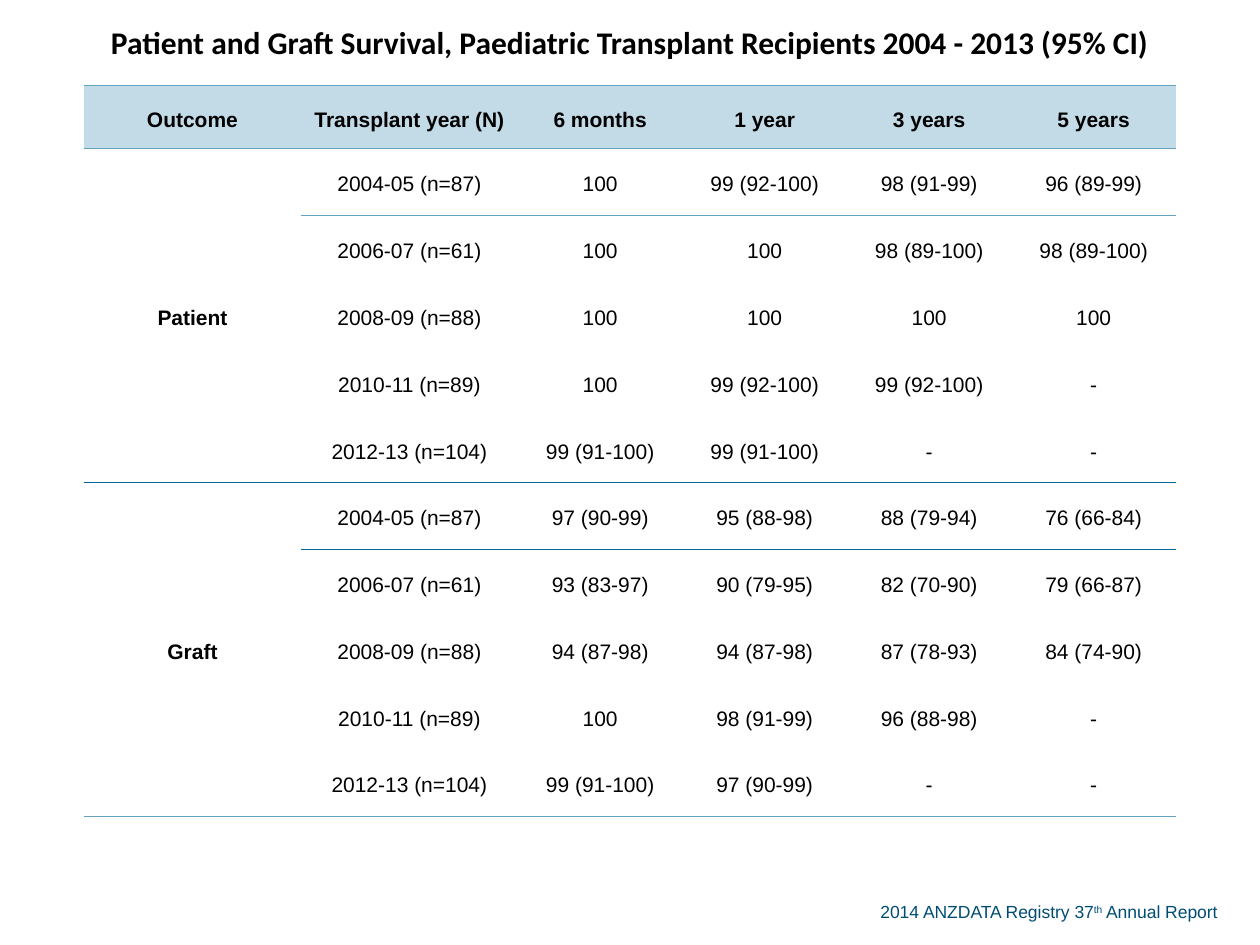
from lxml import etree
from pptx import Presentation
from pptx.dml.color import RGBColor
from pptx.enum.text import MSO_ANCHOR, PP_ALIGN
from pptx.oxml.ns import qn
from pptx.util import Pt

CENTER, LEFT = PP_ALIGN.CENTER, PP_ALIGN.LEFT
MIDDLE = MSO_ANCHOR.MIDDLE

BLACK = RGBColor(0x00, 0x00, 0x00)
NAVY = RGBColor(0x00, 0x4D, 0x73)
HEADER_FILL = RGBColor(0xC2, 0xDB, 0xE7)
LIGHT_RULE = RGBColor(0x66, 0xA3, 0xC2)
DARK_RULE = RGBColor(0x00, 0x66, 0x99)

PLAIN_STYLE = "{2D5ABB26-0587-4C30-8999-92F81FD0307C}"
COLUMN_WIDTHS = [124, 124, 94, 94, 94, 94]
TITLE_HEIGHT, HEADER_HEIGHT, DATA_HEIGHT = 48.8, 36, 38.17

TITLE = "Patient and Graft Survival, Paediatric Transplant Recipients 2004 - 2013 (95% CI)"
HEADERS = ["Outcome", "Transplant year (N)", "6 months", "1 year", "3 years", "5 years"]
COHORTS = ["2004-05 (n=87)", "2006-07 (n=61)", "2008-09 (n=88)",
           "2010-11 (n=89)", "2012-13 (n=104)"]
SURVIVAL = {
    "Patient": [
        ["100", "99 (92-100)", "98 (91-99)", "96 (89-99)"],
        ["100", "100", "98 (89-100)", "98 (89-100)"],
        ["100", "100", "100", "100"],
        ["100", "99 (92-100)", "99 (92-100)", "-"],
        ["99 (91-100)", "99 (91-100)", "-", "-"],
    ],
    "Graft": [
        ["97 (90-99)", "95 (88-98)", "88 (79-94)", "76 (66-84)"],
        ["93 (83-97)", "90 (79-95)", "82 (70-90)", "79 (66-87)"],
        ["94 (87-98)", "94 (87-98)", "87 (78-93)", "84 (74-90)"],
        ["100", "98 (91-99)", "96 (88-98)", "-"],
        ["99 (91-100)", "97 (90-99)", "-", "-"],
    ],
}
# Rule colour below each of these table rows
RULES_BELOW = {0: LIGHT_RULE, 1: LIGHT_RULE, 6: DARK_RULE, 11: LIGHT_RULE}


def add_text(para, text, size=12, font="Arial", color=BLACK, bold=False,
             align=CENTER, raised=False):
    para.alignment = align
    span = para.add_run()
    span.text = text
    span.font.size = Pt(size)
    span.font.name = font
    span.font.bold = bold
    span.font.color.rgb = color
    if raised:
        span.font._element.set("baseline", "30000")


def add_border(cell, side, color):
    line = etree.SubElement(cell._tc.get_or_add_tcPr(), qn("a:" + side), w=str(Pt(0.5)))
    fill = etree.SubElement(line, qn("a:solidFill"))
    etree.SubElement(fill, qn("a:srgbClr"), val=str(color))


def format_cell(cell, row, last_row):
    cell.vertical_anchor = MIDDLE
    cell.margin_left = cell.margin_right = cell.margin_top = Pt(0.75)
    cell.margin_bottom = 0
    if row - 1 in RULES_BELOW:
        add_border(cell, "lnT", RULES_BELOW[row - 1])
    if last_row in RULES_BELOW:
        add_border(cell, "lnB", RULES_BELOW[last_row])
    if row == 1:
        cell.fill.solid()
        cell.fill.fore_color.rgb = HEADER_FILL
    else:
        cell.fill.background()


def fill_cell(cell, text, bold=False):
    para = cell.text_frame.paragraphs[0]
    para.line_spacing = 1.19
    para.space_after = Pt(14)
    add_text(para, text, bold=bold)


def add_survival_table(page):
    row_heights = [TITLE_HEIGHT, HEADER_HEIGHT] + [DATA_HEIGHT] * (len(SURVIVAL) * len(COHORTS))
    frame = page.shapes.add_table(len(row_heights), len(HEADERS), Pt(48), 0,
                                  Pt(sum(COLUMN_WIDTHS)), Pt(sum(row_heights)))
    table = frame.table
    table.first_row = table.horz_banding = False
    table._tbl.tblPr.find(qn("a:tableStyleId")).text = PLAIN_STYLE
    for column, width in zip(table.columns, COLUMN_WIDTHS):
        column.width = Pt(width)
    for row, height in zip(table.rows, row_heights):
        row.height = Pt(height)

    # Title and header rows
    table.cell(0, 0).merge(table.cell(0, len(HEADERS) - 1))
    add_text(table.cell(0, 0).text_frame.paragraphs[0], TITLE,
             size=18, font="Calibri", bold=True)
    for column, header in enumerate(HEADERS):
        fill_cell(table.cell(1, column), header, bold=True)

    # One block of rows per outcome
    for group, (outcome, results) in enumerate(SURVIVAL.items()):
        first = 2 + group * len(COHORTS)
        table.cell(first, 0).merge(table.cell(first + len(COHORTS) - 1, 0))
        fill_cell(table.cell(first, 0), outcome, bold=True)
        for row, (cohort, values) in enumerate(zip(COHORTS, results), first):
            for column, text in enumerate([cohort] + values, 1):
                fill_cell(table.cell(row, column), text)

    # Rules and fills
    for row in range(len(row_heights)):
        for column in range(len(HEADERS)):
            cell = table.cell(row, column)
            height = cell.span_height if cell.is_merge_origin else 1
            format_cell(cell, row, row + height - 1)


def add_source_line(page):
    box = page.shapes.add_textbox(Pt(496), Pt(511.2), Pt(215.5), Pt(19.4))
    box.text_frame.word_wrap = True
    para = box.text_frame.paragraphs[0]
    for text, raised in [("2014 ANZDATA Registry 37", False), ("th", True),
                         (" Annual Report", False)]:
        add_text(para, text, size=10, color=NAVY, align=LEFT, raised=raised)


def main():
    deck = Presentation()
    deck.slide_width, deck.slide_height = Pt(720), Pt(540)
    page = deck.slides.add_slide(deck.slide_layouts[6])
    add_source_line(page)
    add_survival_table(page)
    deck.save("out.pptx")


if __name__ == "__main__":
    main()
